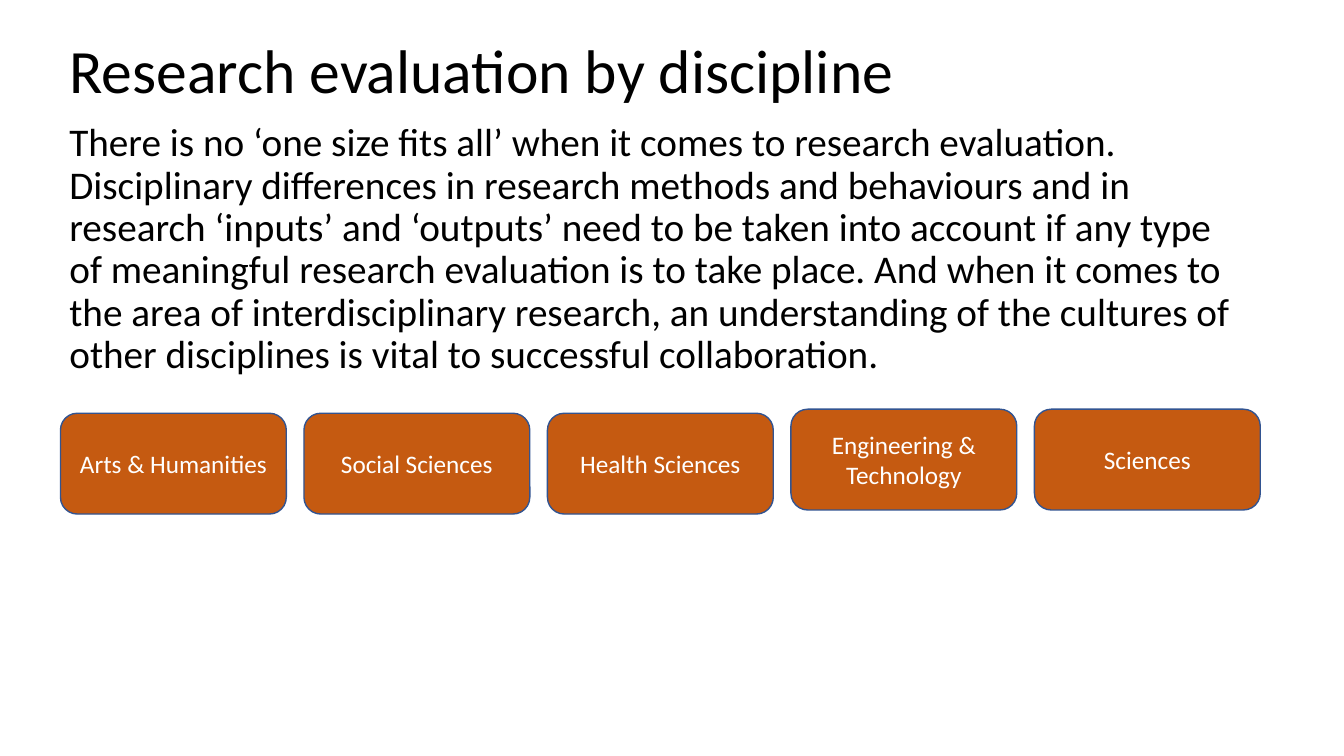
from pptx import Presentation
from pptx.dml.color import RGBColor
from pptx.enum.shapes import MSO_SHAPE
from pptx.enum.text import MSO_ANCHOR, MSO_AUTO_SIZE, PP_ALIGN
from pptx.util import Inches, Pt

COLORS = {"text": "000000", "box": "C55A11", "outline": "325491", "label": "FFFFFF"}
LEFT = 0.59
BOX_LEFT, BOX_PITCH, BOX_WIDTH, BOX_HEIGHT = 0.6, 2.415, 2.24, 1
LOW_ROW, HIGH_ROW = 4.1, 4.06


def write(shape, text, size, color, align, anchor, line_spacing=1.0):
    frame = shape.text_frame
    frame.text = text
    frame.word_wrap = True
    frame.auto_size = MSO_AUTO_SIZE.NONE
    frame.vertical_anchor = anchor
    paragraph = frame.paragraphs[0]
    paragraph.alignment = align
    paragraph.line_spacing = line_spacing
    font = paragraph.runs[0].font
    font.name = "Calibri"
    font.size = Pt(size)
    font.color.rgb = RGBColor.from_string(COLORS[color])


presentation = Presentation()
presentation.slide_width = Inches(13.33)
presentation.slide_height = Inches(7.5)
slide = presentation.slides.add_slide(presentation.slide_layouts[5])

# Title
title = slide.shapes.title
title.left, title.top = Inches(LEFT), Inches(0)
title.width, title.height = Inches(11.5), Inches(1.45)
write(title, "Research evaluation by discipline", 44, "text",
      PP_ALIGN.LEFT, MSO_ANCHOR.MIDDLE, 0.9)

# Introduction
introduction = slide.shapes.add_textbox(
    Inches(LEFT), Inches(1.17), Inches(11.9), Inches(3))
write(introduction,
      "There is no ‘one size fits all’ when it comes to research evaluation. "
      "Disciplinary differences in research methods and behaviours and in "
      "research ‘inputs’ and ‘outputs’ need to be taken into account if any type "
      "of meaningful research evaluation is to take place. And when it comes to "
      "the area of interdisciplinary research, an understanding of the cultures of "
      "other disciplines is vital to successful collaboration.",
      28, "text", PP_ALIGN.LEFT, MSO_ANCHOR.TOP, 0.9)

# Discipline boxes
disciplines = [
    ("Arts & Humanities", LOW_ROW),
    ("Social Sciences", LOW_ROW),
    ("Health Sciences", LOW_ROW),
    ("Engineering & Technology", HIGH_ROW),
    ("Sciences", HIGH_ROW),
]
for column, (discipline, top) in enumerate(disciplines):
    box = slide.shapes.add_shape(
        MSO_SHAPE.ROUNDED_RECTANGLE, Inches(BOX_LEFT + column * BOX_PITCH),
        Inches(top), Inches(BOX_WIDTH), Inches(BOX_HEIGHT))
    box.shadow.inherit = False
    box.fill.solid()
    box.fill.fore_color.rgb = RGBColor.from_string(COLORS["box"])
    box.line.color.rgb = RGBColor.from_string(COLORS["outline"])
    box.line.width = Pt(1)
    write(box, discipline, 18, "label", PP_ALIGN.CENTER, MSO_ANCHOR.MIDDLE)

presentation.save("out.pptx")
